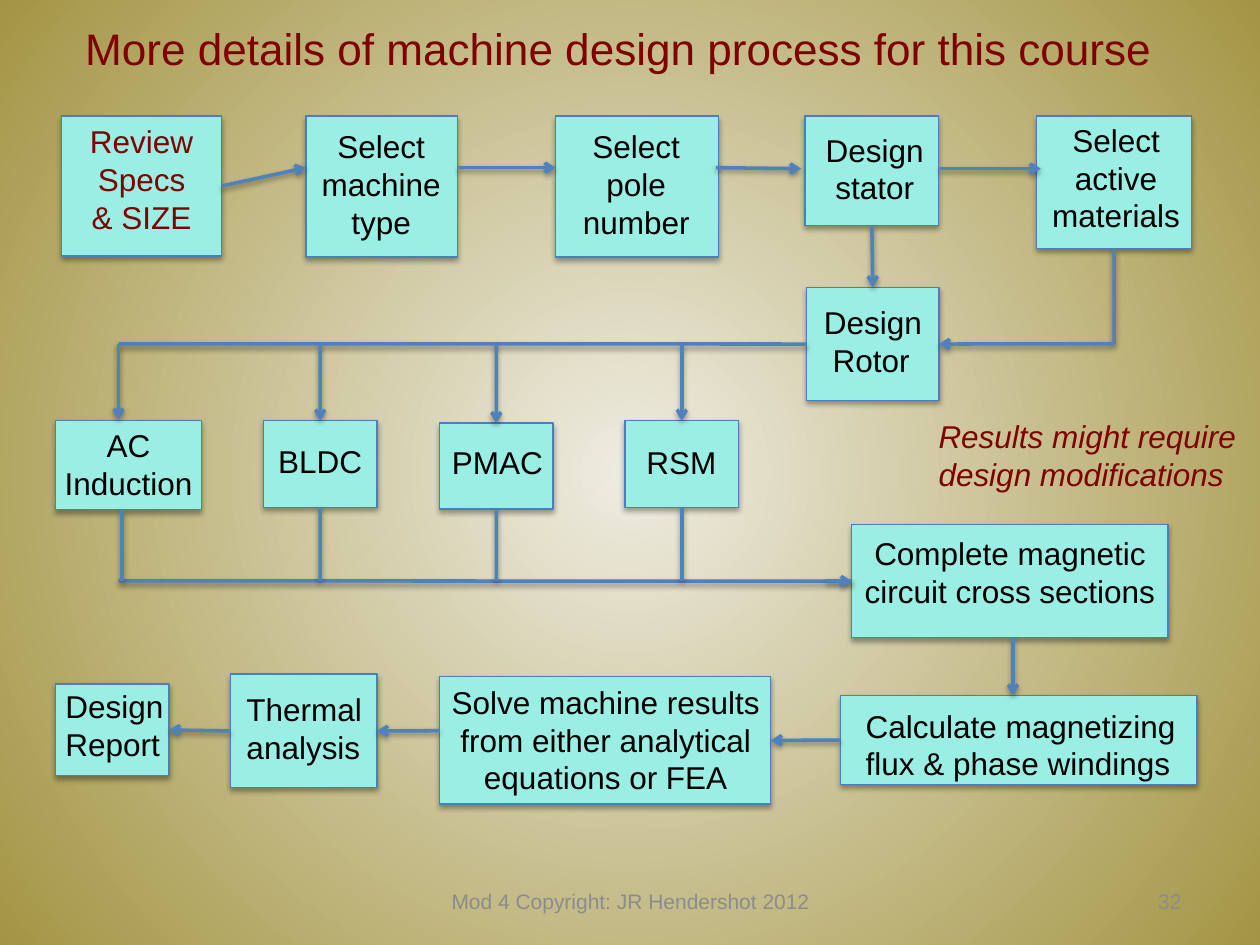
import pptx
import pptx.util
import pptx.dml.color
import pptx.enum.dml
import pptx.enum.shapes
import pptx.enum.text
import pptx.oxml.ns
from lxml import etree

Cm, Pt = pptx.util.Cm, pptx.util.Pt
ALIGN = pptx.enum.text.PP_ALIGN
ANCHOR = pptx.enum.text.MSO_ANCHOR
AUTO = pptx.enum.text.MSO_AUTO_SIZE
qn = pptx.oxml.ns.qn

COLOURS = {"centre": "EEECE1", "edge": "A49544", "box": "9BEEE3", "border": "4B7EBC",
           "line": "4F81BD", "accent": "800000", "text": "000000", "muted": "8C8C8C"}
TOP, LEFT, BOTTOM, RIGHT = range(4)
BUS, COLLECTOR = 6.93, 11.71

TITLE = "More details of machine design process for this course"

BOXES = {
    "review": (1.24, 2.34, 3.23, 2.82),
    "type": (6.17, 2.34, 3.05, 2.84),
    "poles": (11.2, 2.34, 3.28, 2.84),
    "stator": (16.23, 2.34, 2.69, 2.21),
    "materials": (20.9, 2.34, 3.12, 2.67),
    "rotor": (16.26, 5.79, 2.67, 2.29),
    "induction": (1.12, 8.48, 2.95, 1.8),
    "bldc": (5.31, 8.48, 2.29, 1.75),
    "pmac": (8.86, 8.53, 2.29, 1.73),
    "rsm": (12.6, 8.48, 2.29, 1.75),
    "sections": (17.17, 10.57, 6.38, 2.29),
    "windings": (16.94, 14.02, 7.19, 1.8),
    "solve": (8.86, 13.64, 6.68, 2.57),
    "thermal": (4.65, 13.59, 2.95, 2.29),
    "report": (1.12, 13.79, 2.29, 1.85),
}

CENTRED = {"align": ALIGN.CENTER}
UNWRAPPED = {"wrap": False}
FOOTER = {"size": 12, "colour": "muted", "anchor": ANCHOR.MIDDLE, "fit": AUTO.NONE}
LABELS = [
    ("Select machine type", (6.07, 2.44, 3.23, 2.57), CENTRED),
    ("Select pole number", (11.35, 2.44, 2.95, 2.57), CENTRED),
    ("Design stator", (16.15, 2.51, 2.97, 1.8), CENTRED),
    ("Select active materials", (20.47, 2.31, 4.06, 2.57), CENTRED),
    ("Design\n Rotor", (16.36, 5.99, 2.51, 1.8), UNWRAPPED),
    ("AC Induction", (0.81, 8.46, 3.56, 1.8), CENTRED),
    ("BLDC", (5.36, 8.79, 2.24, 1.02), UNWRAPPED),
    ("PMAC", (8.86, 8.81, 2.54, 1.02), {}),
    ("RSM", (12.78, 8.81, 1.93, 1.02), UNWRAPPED),
    ("Complete magnetic circuit cross sections", (16.64, 10.64, 7.44, 1.8), CENTRED),
    ("Calculate magnetizing flux & phase windings", (17.2, 14.12, 7.39, 1.8), {}),
    ("Solve machine results from either analytical equations or FEA",
     (8.64, 13.64, 7.14, 2.57), CENTRED),
    ("Thermal analysis", (4.72, 13.79, 2.84, 1.8), {}),
    ("Design\nReport", (1.07, 13.72, 3.35, 1.8), {}),
    ("Results might require design modifications", (18.67, 8.28, 7.42, 1.8),
     {"colour": "accent", "italic": True}),
    ("Mod 4 Copyright: JR Hendershot 2012", (8.69, 17.65, 8.05, 1.02), {**FOOTER, **CENTRED}),
    ("32", (18.2, 17.65, 5.87, 1.02), {**FOOTER, "align": ALIGN.RIGHT}),
]

ARROWS = [
    (("review", RIGHT), (6.17, 3.38)),
    ((9.22, 3.38), (11.2, 3.38)),
    ((14.43, 3.38), (16.15, 3.4)),
    ((18.95, 3.4), (20.98, 3.4)),
    (("stator", BOTTOM), ("rotor", TOP)),
    ((22.46, BUS), ("rotor", RIGHT)),
    ((2.39, BUS), (2.39, 8.46)),
    ((16.64, COLLECTOR), ("sections", LEFT)),
    ((20.42, 12.86), (20.42, 14.02)),
    (("windings", LEFT), ("solve", RIGHT)),
    ((8.86, 14.73), ("thermal", RIGHT)),
    (("thermal", LEFT), ("report", RIGHT)),
]
LINES = [
    (("materials", BOTTOM), (22.46, BUS)),
    (("rotor", LEFT), (2.39, BUS)),
    (("sections", LEFT), (2.39, COLLECTOR)),
    ((2.46, COLLECTOR), (2.46, 10.28)),
]
for motor in ("bldc", "pmac", "rsm"):
    middle = BOXES[motor][0] + BOXES[motor][2] / 2
    ARROWS.append(((middle, BUS), (motor, TOP)))
    LINES.append(((motor, BOTTOM), (middle, COLLECTOR)))


def rgb(name):
    return pptx.dml.color.RGBColor.from_string(COLOURS[name])


def write(frame, text, size=18, colour="text", italic=False, align=ALIGN.LEFT,
          anchor=ANCHOR.TOP, wrap=True, fit=AUTO.SHAPE_TO_FIT_TEXT):
    frame.word_wrap, frame.auto_size, frame.vertical_anchor = wrap, fit, anchor
    for index, line in enumerate(text.split("\n")):
        para = frame.add_paragraph() if index else frame.paragraphs[0]
        para.alignment = align
        span = para.add_run()
        span.text = line
        span.font.name, span.font.size, span.font.italic = "Arial", Pt(size), italic
        span.font.color.rgb = rgb(colour)


def add_shadow(shape, opacity, distance):
    properties = shape._element.spPr
    effects = properties.find(qn("a:effectLst"))
    if effects is None:
        effects = etree.SubElement(properties, qn("a:effectLst"))
    shadow = etree.SubElement(effects, qn("a:outerShdw"), blurRad="40000", dist=str(distance),
                              dir="5400000", rotWithShape="0")
    black = etree.SubElement(shadow, qn("a:srgbClr"), val="000000")
    etree.SubElement(black, qn("a:alpha"), val=str(opacity * 1000))


def paint_background(page):
    fill = page.background.fill
    fill.gradient()
    for stop, name, position in zip(fill.gradient_stops, ("centre", "edge"), (0, 1)):
        stop.color.rgb, stop.position = rgb(name), position
    gradient = page._element.find(".//" + qn("a:gradFill"))
    gradient.remove(gradient.find(qn("a:lin")))
    circle = etree.SubElement(gradient, qn("a:path"), path="circle")
    etree.SubElement(circle, qn("a:fillToRect"), l="50000", t="50000", r="50000", b="50000")


def add_box(page, place):
    box = page.shapes.add_shape(pptx.enum.shapes.MSO_SHAPE.RECTANGLE, *map(Cm, place))
    box.fill.solid()
    box.fill.fore_color.rgb = rgb("box")
    box.line.color.rgb, box.line.width = rgb("border"), Pt(0.75)
    box.shadow.inherit = False
    add_shadow(box, 35, 23000)
    return box


def add_line(page, boxes, start, end, arrow):
    line = page.shapes.add_connector(pptx.enum.shapes.MSO_CONNECTOR.STRAIGHT, 0, 0, 0, 0)
    if start[0] in boxes:
        line.begin_connect(boxes[start[0]], start[1])
    else:
        line.begin_x, line.begin_y = map(Cm, start)
    if end[0] in boxes:
        line.end_connect(boxes[end[0]], end[1])
    else:
        line.end_x, line.end_y = map(Cm, end)
    line.line.color.rgb, line.line.width = rgb("line"), Pt(2)
    if arrow:
        etree.SubElement(line._element.spPr.find(qn("a:ln")), qn("a:tailEnd"), type="arrow")
    add_shadow(line, 38, 20000)


def main():
    """Build the machine design process slide."""
    deck = pptx.Presentation()
    deck.slide_width, deck.slide_height = Cm(25.4), Cm(19.05)
    page = deck.slides.add_slide(deck.slide_layouts[5])
    paint_background(page)

    title = page.shapes.title
    title.left, title.top, title.width, title.height = map(Cm, (0, 0.05, 24.61, 2.57))
    heading = {"colour": "accent", "align": ALIGN.CENTER, "fit": AUTO.NONE}
    write(title.text_frame, " ", size=32.4, **heading)
    write(title.text_frame, TITLE, size=25.2, **heading)

    boxes = {name: add_box(page, place) for name, place in BOXES.items()}
    write(boxes["review"].text_frame, "Review Specs\n& SIZE", colour="accent",
          align=ALIGN.CENTER, fit=AUTO.NONE)
    for text, place, style in LABELS:
        write(page.shapes.add_textbox(*map(Cm, place)).text_frame, text, **style)
    for routes, arrow in ((LINES, False), (ARROWS, True)):
        for start, end in routes:
            add_line(page, boxes, start, end, arrow)

    deck.save("out.pptx")


if __name__ == "__main__":
    main()
